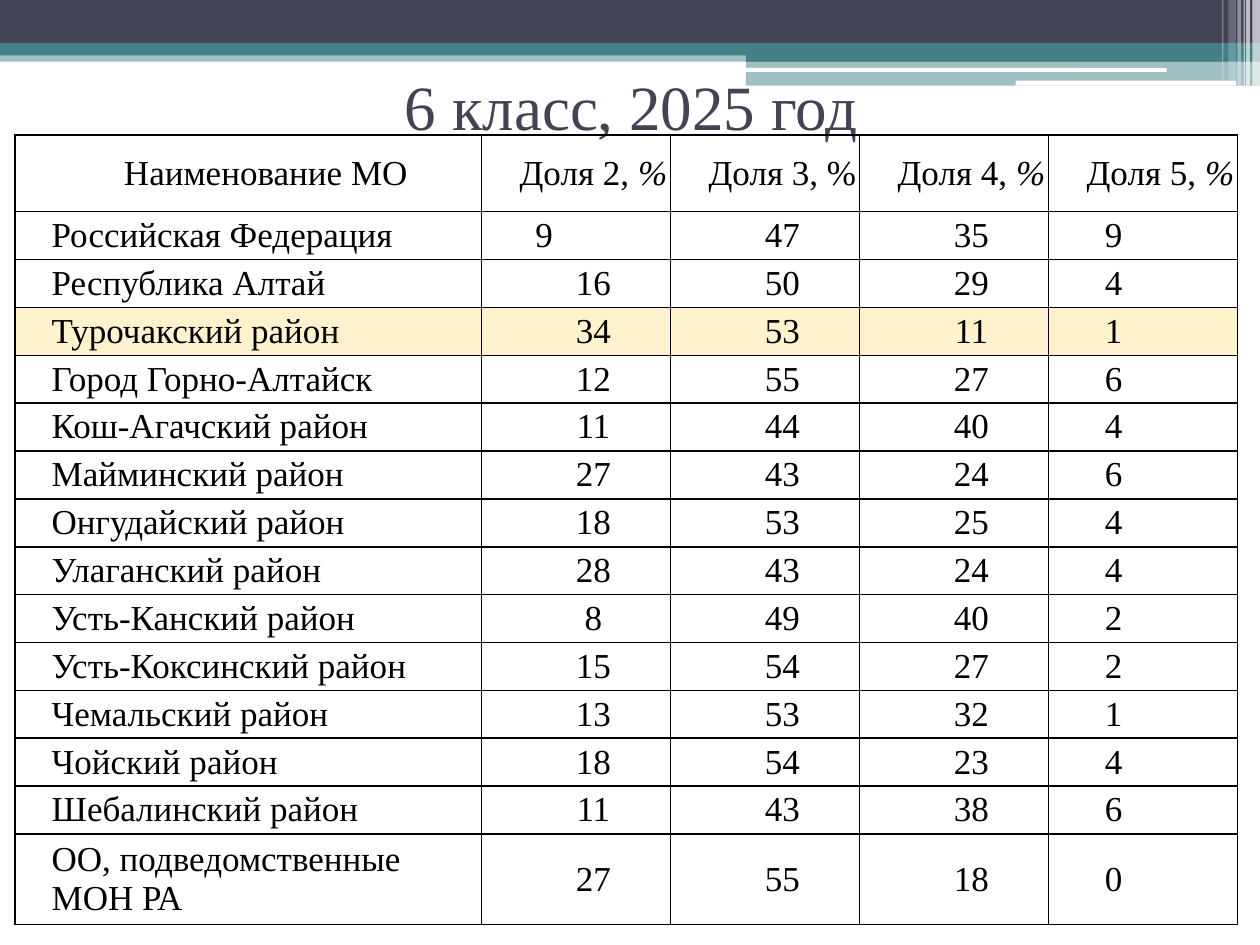
from lxml.etree import SubElement as Sub
from pptx import Presentation
from pptx.dml.color import RGBColor
from pptx.enum.shapes import MSO_SHAPE as Kind
from pptx.enum.text import MSO_ANCHOR as Anchor, MSO_AUTO_SIZE as Fit, PP_ALIGN as Align
from pptx.oxml.ns import qn
from pptx.util import Inches, Pt

DARK = RGBColor(0x42, 0x44, 0x56)
TEAL = RGBColor(0x43, 0x80, 0x86)
WHITE = RGBColor(0xFF, 0xFF, 0xFF)
BLACK = RGBColor(0x00, 0x00, 0x00)
CREAM = RGBColor(0xFF, 0xF2, 0xCC)
FONT = "Times New Roman"

BANDS = [
    (0, 0.4, 10, 0.09, TEAL, 50),
    (0, 0, 10, 0.34, DARK, 100),
    (0, 0.34, 10, 0.1, TEAL, 100),
    (5.92, 0.39, 4.08, 0.1, TEAL, 100),
    (5.92, 0.48, 4.08, 0.2, TEAL, 50),
]
PILLS = [(5.91, 0.54, 3.35, 0.03), (8.06, 0.64, 1.75, 0.04)]
STRIPES = [
    (9.94, 0.06, 0.68, 65),
    (9.89, 0.03, 0.68, 65),
    (9.87, 0.01, 0.68, 60),
    (9.82, 0.03, 0.68, 40),
    (9.75, 0.06, 0.64, 20),
    (9.7, 0.01, 0.64, 30),
]

HEAD = [
    [("Наименование МО", False)],
    [("Доля 2, ", False), ("%", True)],
    [("Доля 3, %", False)],
    [("Доля 4, ", False), ("%", True)],
    [("Доля 5, ", False), ("%", True)],
]
ROWS = [
    ("Российская Федерация", 9, 47, 35, 9),
    ("Республика Алтай", 16, 50, 29, 4),
    ("Турочакский район", 34, 53, 11, 1),
    ("Город Горно-Алтайск", 12, 55, 27, 6),
    ("Кош-Агачский район", 11, 44, 40, 4),
    ("Майминский район", 27, 43, 24, 6),
    ("Онгудайский район", 18, 53, 25, 4),
    ("Улаганский район", 28, 43, 24, 4),
    ("Усть-Канский район", 8, 49, 40, 2),
    ("Усть-Коксинский район", 15, 54, 27, 2),
    ("Чемальский район", 13, 53, 32, 1),
    ("Чойский район", 18, 54, 23, 4),
    ("Шебалинский район", 11, 43, 38, 6),
    ("ОО, подведомственные\nМОН РА", 27, 55, 18, 0),
]
OURS = 3


def add_run(para, text, size, color, slant=False):
    run = para.add_run()
    run.text = text
    font = run.font
    font.name, font.size, font.italic = FONT, Pt(size), slant
    font.color.rgb = color


def add_bar(slide, box, color, alpha=100, kind=Kind.RECTANGLE):
    bar = slide.shapes.add_shape(kind, *map(Inches, box))
    bar.shadow.inherit = False
    bar.line.fill.background()
    bar.fill.solid()
    bar.fill.fore_color.rgb = color
    if alpha < 100:
        tint = bar.element.spPr.find(".//" + qn("a:srgbClr"))
        Sub(tint, qn("a:alpha"), val=str(alpha * 1000))


def add_top(slide, left, top):
    for x, y, wide, high, color, alpha in BANDS:
        add_bar(slide, (left + x, top + y, wide, high), color, alpha)
    for x, y, wide, high in PILLS:
        add_bar(slide, (left + x, top + y, wide, high), WHITE, kind=Kind.ROUNDED_RECTANGLE)
    for x, wide, high, alpha in STRIPES:
        add_bar(slide, (left + x, top, wide, high), WHITE, alpha)


def add_title(slide, left, top, wide, high):
    title = slide.shapes.title
    title.left, title.top = Inches(left), Inches(top)
    title.width, title.height = Inches(wide), Inches(high)
    frame = title.text_frame
    frame.auto_size = Fit.NONE
    frame.vertical_anchor = Anchor.MIDDLE
    para = frame.paragraphs[0]
    para.alignment = Align.CENTER
    add_run(para, "6 класс, 2025 год", 36, DARK)
    slide.shapes.element.append(title.element)


def add_edges(cell):
    props = cell._tc.get_or_add_tcPr()
    for side in ("lnL", "lnR", "lnT", "lnB"):
        line = Sub(props, qn("a:" + side), w=str(Pt(1)))
        Sub(Sub(line, qn("a:solidFill")), qn("a:srgbClr"), val=str(BLACK))


def fill_cell(cell, lines, align, indent, color):
    cell.margin_left = cell.margin_right = Inches(0.01)
    cell.margin_top = cell.margin_bottom = 0
    cell.vertical_anchor = Anchor.MIDDLE
    add_edges(cell)
    if color is None:
        cell.fill.background()
    else:
        cell.fill.solid()
        cell.fill.fore_color.rgb = color
    frame = cell.text_frame
    for i, runs in enumerate(lines):
        para = frame.add_paragraph() if i else frame.paragraphs[0]
        para.alignment = align
        props = para._p.get_or_add_pPr()
        props.set("marL", "0")
        props.set("indent", str(Inches(indent)))
        for text, slant in runs:
            add_run(para, text, 20, BLACK, slant)


def get_style(row, col):
    if row == 0:
        return Align.CENTER, 0.28
    if col == 0:
        return Align.LEFT, 0.28
    if col == 4:
        return Align.JUSTIFY, 0.44
    if (row, col) == (1, 1):
        return Align.LEFT, 0.42
    return Align.CENTER, 0.28


def add_grid(slide, left, top, wide, high):
    count = len(ROWS) + 1
    grid = slide.shapes.add_table(count, 5, *map(Inches, (left, top, wide, high))).table
    grid.first_row = grid.horz_banding = False
    for col, size in zip(grid.columns, [wide - 4 * 1.5] + [1.5] * 4):
        col.width = Inches(size)
    for row, size in zip(grid.rows, [0.61] + [0.38] * (count - 2) + [0.72]):
        row.height = Inches(size)
    for c, runs in enumerate(HEAD):
        fill_cell(grid.cell(0, c), [runs], *get_style(0, c), None)
    for r, values in enumerate(ROWS, 1):
        color = CREAM if r == OURS else None
        for c, value in enumerate(values):
            lines = [[(text, False)] for text in str(value).split("\n")]
            fill_cell(grid.cell(r, c), lines, *get_style(r, c), color)


def main():
    deck = Presentation()
    deck.slide_width, deck.slide_height = Inches(10), Inches(7.5)
    slide = deck.slides.add_slide(deck.slide_layouts[5])
    slide.background.fill.solid()
    slide.background.fill.fore_color.rgb = WHITE
    add_top(slide, 0, 0)
    add_title(slide, 0.51, 0.6, 9, 0.47)
    add_grid(slide, 0.12, 1.07, 9.7, 6.27)
    deck.save("out.pptx")


if __name__ == "__main__":
    main()
